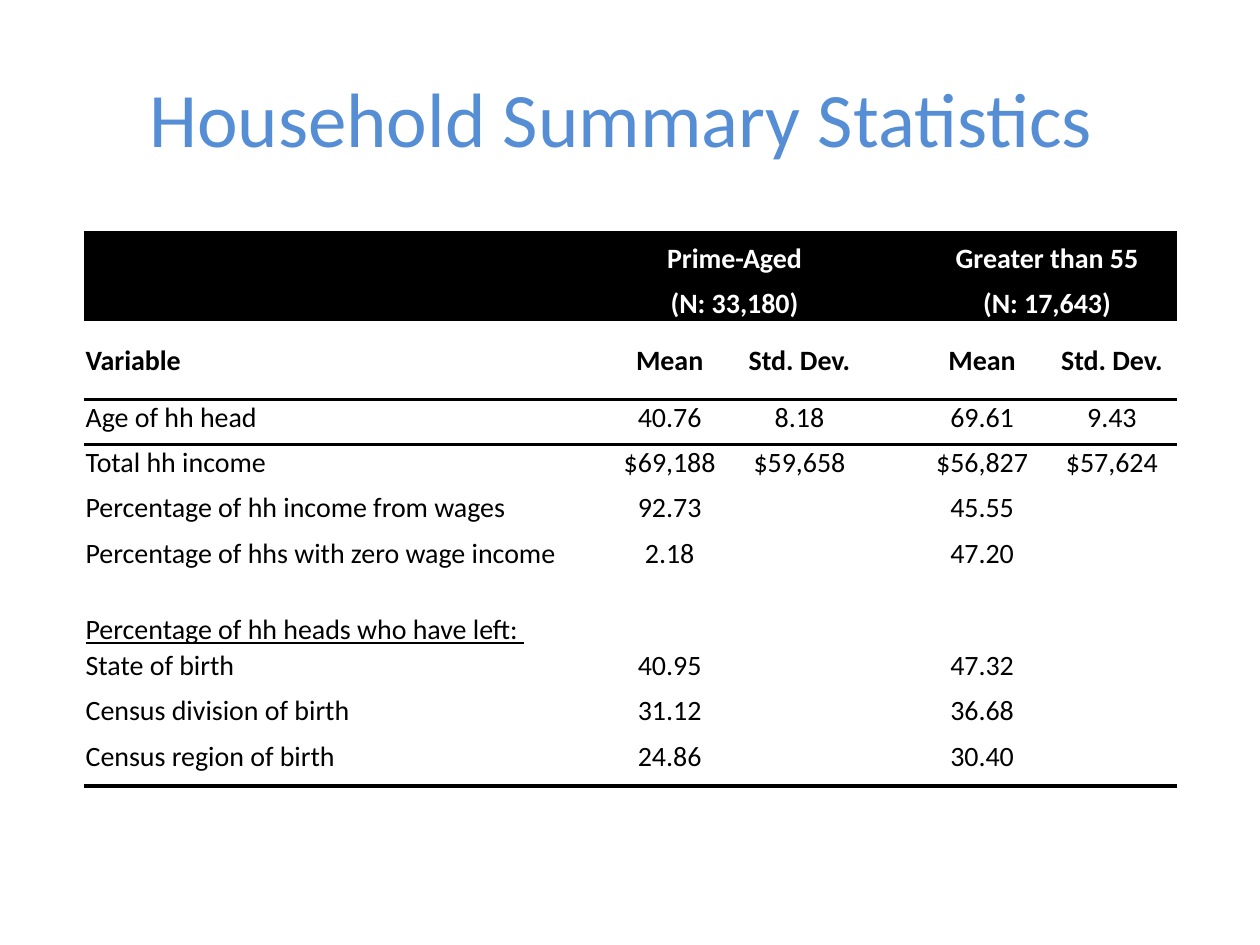
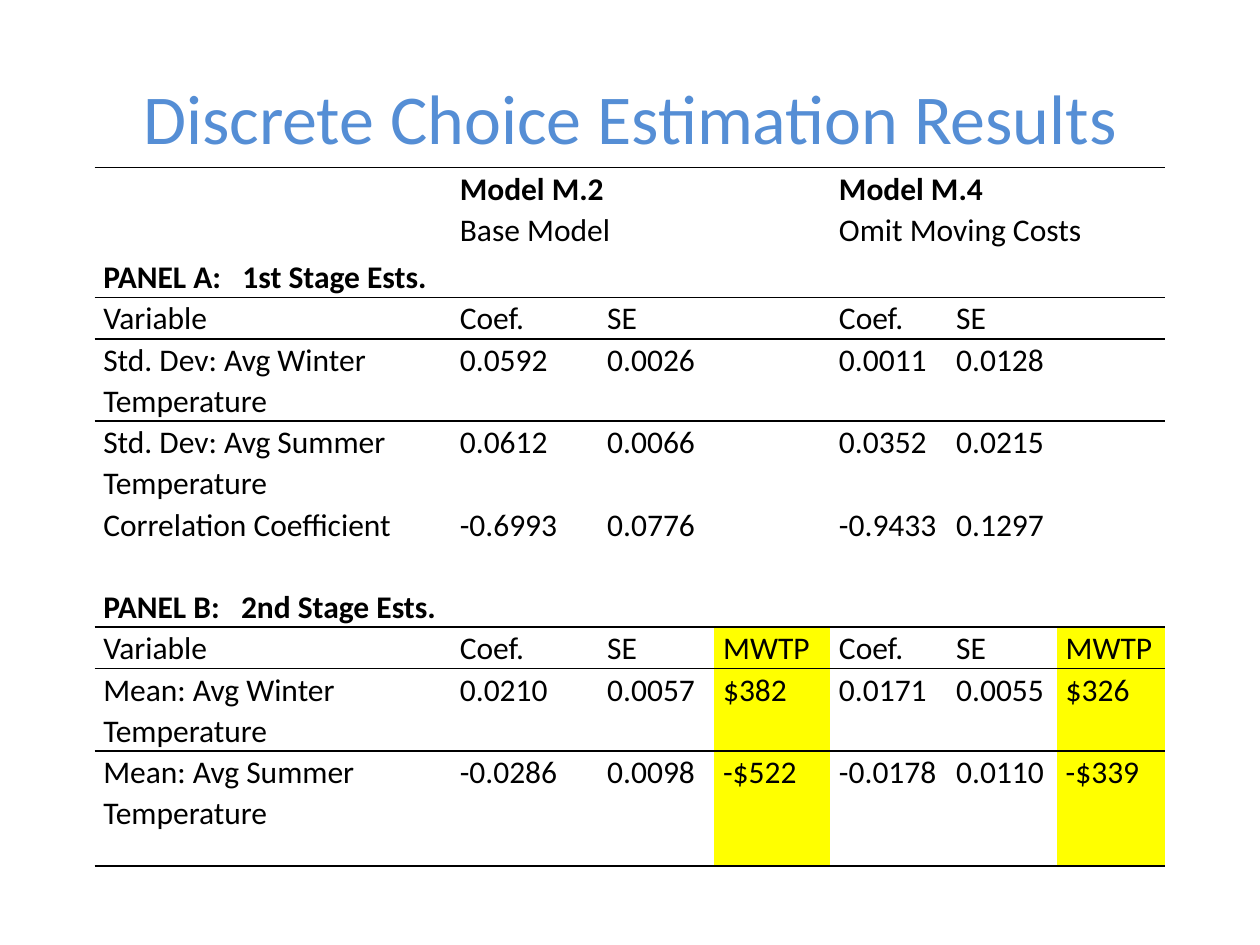
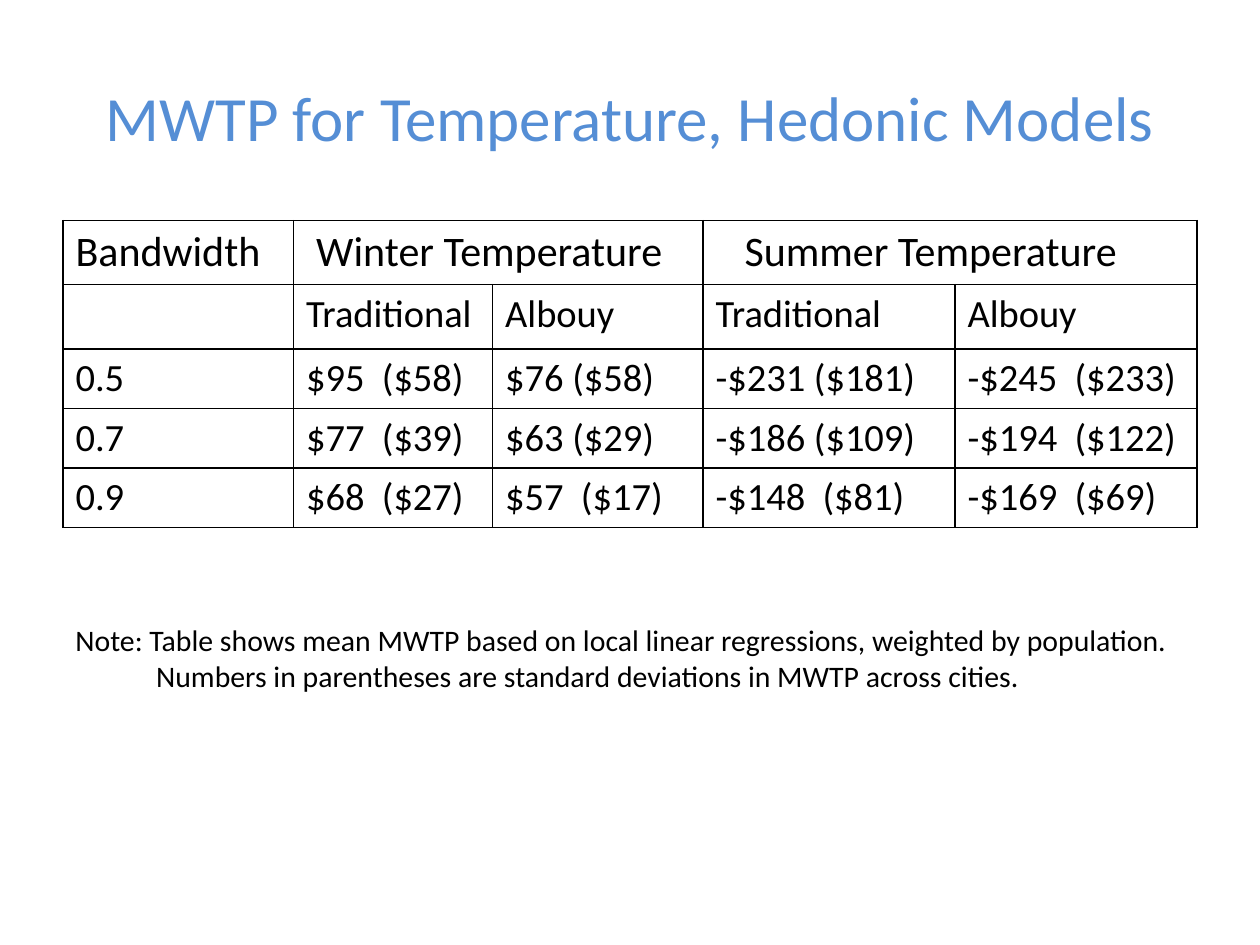
from lxml.etree import SubElement
from pptx import Presentation
from pptx.dml.color import RGBColor
from pptx.enum.text import MSO_ANCHOR, PP_ALIGN
from pptx.oxml.ns import qn
from pptx.util import Inches, Pt

COLORS = {"title": "558ED5", "ink": "000000", "paper": "FFFFFF", "highlight": "FFFF00"}
COLORS_RGB = {name: RGBColor.from_string(value) for name, value in COLORS.items()}
FONT = "Calibri"
NO_STYLE = "{2D5ABB26-0587-4C30-8999-92F81FD0307C}"


def add_titled_slide(deck, title, size):
    slide = deck.slides.add_slide(deck.slide_layouts[5])
    heading = slide.shapes.title
    heading.left, heading.top = Inches(0.5), Inches(0.3)
    heading.width, heading.height = Inches(9), Inches(1.25)
    heading.text_frame.text = title
    heading.text_frame.vertical_anchor = MSO_ANCHOR.MIDDLE
    paragraph = heading.text_frame.paragraphs[0]
    paragraph.alignment = PP_ALIGN.CENTER
    paragraph.font.name, paragraph.font.size = FONT, Pt(size)
    paragraph.font.color.rgb = COLORS_RGB["title"]
    return slide


def add_ruled_table(slide, corner, widths, heights, rows, size, insets, rules, rule_width, grid=False):
    """Draw rows of text; None joins a cell to its left neighbour, rules are row boundaries."""
    frame = slide.shapes.add_table(
        len(rows), len(widths), Inches(corner[0]), Inches(corner[1]),
        Inches(sum(widths)), Inches(sum(heights)))
    table = frame.table
    table.first_row = table.horz_banding = False
    table._tbl.tblPr.find(qn("a:tableStyleId")).text = NO_STYLE
    for column, width in zip(table.columns, widths):
        column.width = Inches(width)
    for r, (texts, height) in enumerate(zip(rows, heights)):
        table.rows[r].height = Inches(height)
        for c, text in enumerate(texts):
            cell = table.cell(r, c)
            cell.margin_left = cell.margin_right = Inches(insets[0])
            cell.margin_top, cell.margin_bottom = Inches(insets[1]), Inches(insets[2])
            cell.text = text or ""
            paragraph = cell.text_frame.paragraphs[0]
            paragraph.font.name = FONT
            paragraph.font.size = Pt(size if text else 12)
            paragraph.font.color.rgb = COLORS_RGB["ink"]
            sides = {"lnL": grid, "lnR": grid, "lnT": r in rules, "lnB": r + 1 in rules}
            for side, ruled in sides.items():
                line = SubElement(cell._tc.get_or_add_tcPr(), qn("a:" + side), w=str(Pt(rule_width)))
                fill = SubElement(line, qn("a:solidFill" if ruled else "a:noFill"))
                if ruled:
                    SubElement(fill, qn("a:srgbClr"), val=COLORS["ink"])
        for c, text in enumerate(texts):
            if text is not None and None in texts[c + 1:c + 2]:
                end = c + 1
                while end < len(texts) and texts[end] is None:
                    end += 1
                table.cell(r, c).merge(table.cell(r, end - 1))
    return table


deck = Presentation()
deck.slide_width, deck.slide_height = Inches(10), Inches(7.5)

# Household statistics
households = add_titled_slide(deck, "Household Summary Statistics ", 44)
household_rows = [
    ["", "Prime-Aged", None, "", "Greater than 55", None],
    ["", "(N: 33,180)", None, "", "(N: 17,643)", None],
    ["Variable", "Mean", "Std. Dev.", "", "Mean", "Std. Dev."],
    ["Age of hh head", "40.76", "8.18", "", "69.61", "9.43"],
    ["Total hh income", "$69,188", "$59,658", "", "$56,827", "$57,624"],
    ["Percentage of hh income from wages", "92.73", "", "", "45.55", ""],
    ["Percentage of hhs with zero wage income", "2.18", "", "", "47.20", ""],
    ["Percentage of hh heads who have left: ", "", "", "", "", ""],
    ["State of birth", "40.95", "", "", "47.32", ""],
    ["Census division of birth", "31.12", "", "", "36.68", ""],
    ["Census region of birth", "24.86", "", "", "30.40", ""],
]
household_table = add_ruled_table(
    households, (0.67, 1.83), [4.13, 1.03, 1.03, 0.42, 1.03, 1.03],
    [0.36, 0.36, 0.62] + [0.36] * 4 + [0.53, 0.36, 0.36, 0.38],
    household_rows, 16, (0.01, 0.01, 0), {3, 4, 11}, 2.25)
for r in range(len(household_rows)):
    for c in range(6):
        cell = household_table.cell(r, c)
        paragraph = cell.text_frame.paragraphs[0]
        paragraph.font.bold = r < 3
        if c:
            paragraph.alignment = PP_ALIGN.CENTER
        if r < 2:
            cell.fill.solid()
            cell.fill.fore_color.rgb = COLORS_RGB["ink"]
            paragraph.font.color.rgb = COLORS_RGB["paper"]
            cell.vertical_anchor = MSO_ANCHOR.BOTTOM
        elif r == 2:
            cell.vertical_anchor = MSO_ANCHOR.MIDDLE
left_home = household_table.cell(7, 0)
left_home.vertical_anchor = MSO_ANCHOR.BOTTOM
left_home.text_frame.paragraphs[0].font.underline = True

# Estimation results
estimates = add_titled_slide(deck, "Discrete Choice Estimation Results", 40)
estimate_rows = [
    ["", "Model M.2", None, None, "Model M.4", None, None],
    ["", "Base Model", None, None, "Omit Moving Costs", None, None],
    ["PANEL A:   1st Stage Ests.", "", "", "", "", "", ""],
    ["Variable", "Coef.", "SE", "", "Coef.", "SE", ""],
    ["Std. Dev: Avg Winter Temperature", "0.0592", "0.0026", "", "0.0011", "0.0128", ""],
    ["Std. Dev: Avg Summer Temperature", "0.0612", "0.0066", "", "0.0352", "0.0215", ""],
    ["Correlation Coefficient", "-0.6993", "0.0776", "", "-0.9433", "0.1297", ""],
    ["PANEL B:   2nd Stage Ests.", "", "", "", "", "", ""],
    ["Variable", "Coef.", "SE", "MWTP", "Coef.", "SE", "MWTP"],
    ["Mean: Avg Winter Temperature", "0.0210", "0.0057", "$382", "0.0171", "0.0055", "$326"],
    ["Mean: Avg Summer Temperature", "-0.0286", "0.0098", "-$522", "-0.0178", "0.0110", "-$339"],
    ["", "", "", "", "", "", ""],
]
single, double = 0.33, 0.65
estimate_table = add_ruled_table(
    estimates, (0.75, 1.33), [2.83, 1.17, 0.92, 0.92, 0.93, 0.87, 0.86],
    [single, 0.37, single, single] + [double] * 3 + [single] * 2 + [double] * 2 + [0.26],
    estimate_rows, 18, (0.07, 0, 0), {0, 3, 4, 5, 8, 9, 10, 12}, 1)
for r, texts in enumerate(estimate_rows):
    for c, text in enumerate(texts):
        cell = estimate_table.cell(r, c)
        if text:
            paragraph = cell.text_frame.paragraphs[0]
            paragraph.line_spacing = 1.07
            paragraph.font.bold = text.startswith(("Model", "PANEL"))
        if r >= 8 and c in (3, 6):
            cell.fill.solid()
            cell.fill.fore_color.rgb = COLORS_RGB["highlight"]

# Hedonic models
hedonic = add_titled_slide(deck, "MWTP for Temperature, Hedonic Models", 36)
hedonic_rows = [
    ["Bandwidth", "Winter Temperature", None, "Summer Temperature", None],
    ["", "Traditional", "Albouy", "Traditional", "Albouy"],
    ["0.5", "$95  ($58)", "$76 ($58)", "-$231 ($181)", "-$245  ($233)"],
    ["0.7", "$77  ($39)", "$63 ($29)", "-$186 ($109)", "-$194  ($122)"],
    ["0.9", "$68  ($27)", "$57  ($17)", "-$148  ($81)", "-$169  ($69)"],
]
hedonic_table = add_ruled_table(
    hedonic, (0.5, 1.75), [1.83, 1.58, 1.67, 2, 1.92], [0.51] * 2 + [0.47] * 3,
    hedonic_rows, 22, (0.1, 0.05, 0.05), set(range(6)), 1, grid=True)
for c, indent in {0: 0, 1: 0.08, 3: 0.23}.items():
    paragraph = hedonic_table.cell(0, c).text_frame.paragraphs[0]
    paragraph.font.size = Pt(24)
    paragraph._p.get_or_add_pPr().set("marL", str(Inches(indent)))

note = hedonic.shapes.add_textbox(Inches(0.5), Inches(4.83), Inches(9.08), Inches(0.78)).text_frame
note.word_wrap = True
note.vertical_anchor = MSO_ANCHOR.MIDDLE
note.text = ("Note: Table shows mean MWTP based on local linear regressions, weighted by population.\n"
             "Numbers in parentheses are standard deviations in MWTP across cities.")
for paragraph, indent in zip(note.paragraphs, (0, 0.64)):
    paragraph.font.name, paragraph.font.size = FONT, Pt(17)
    paragraph.font.color.rgb = COLORS_RGB["ink"]
    paragraph._p.get_or_add_pPr().set("marL", str(Inches(indent)))

deck.save("out.pptx")
